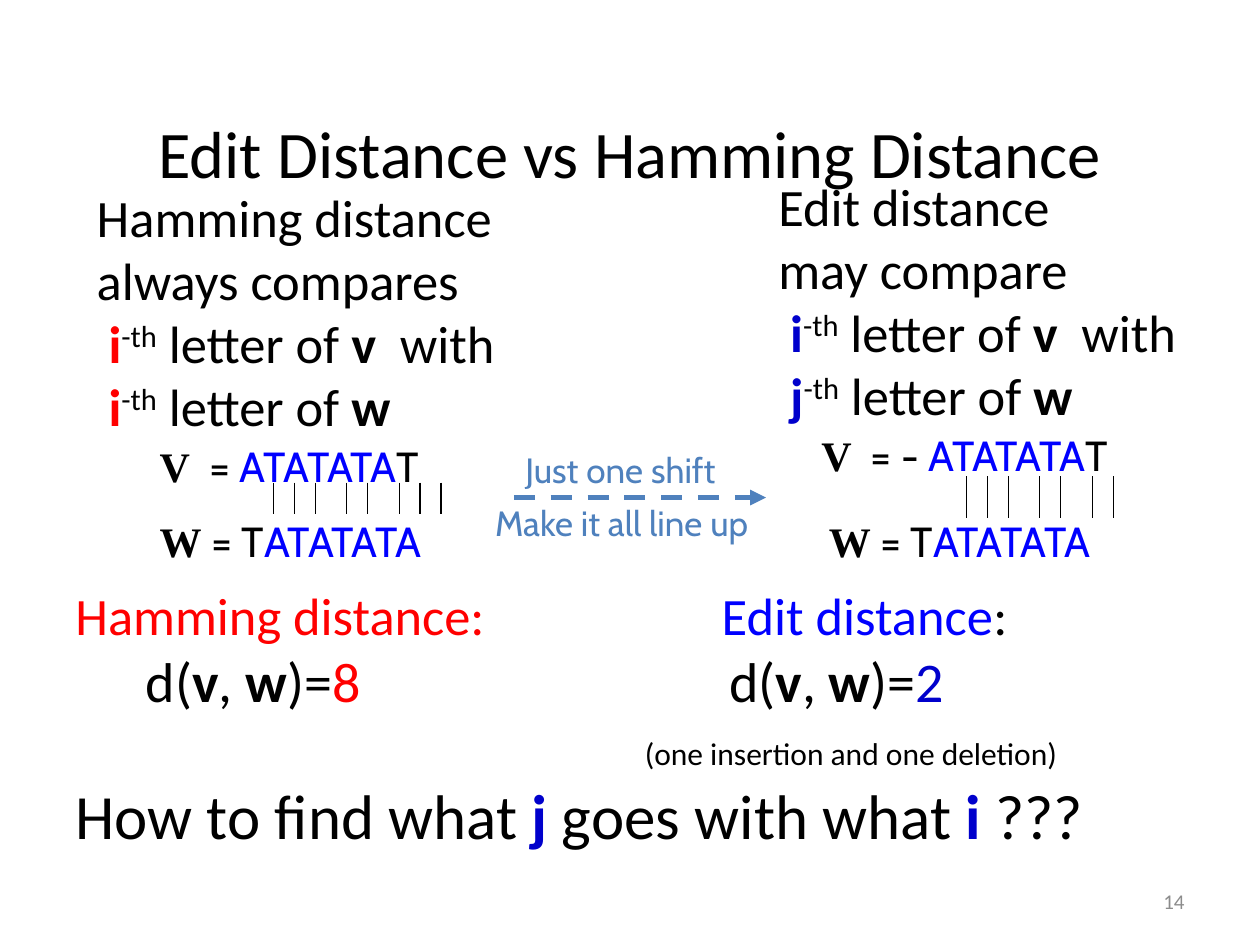
from dataclasses import dataclass
from lxml.etree import SubElement
from pptx import Presentation
from pptx.dml.color import RGBColor
from pptx.enum.dml import MSO_LINE_DASH_STYLE as Dash
from pptx.enum.shapes import MSO_CONNECTOR as Connector
from pptx.enum.text import MSO_ANCHOR as Anchor, MSO_AUTO_SIZE as AutoSize, PP_ALIGN as Align
from pptx.oxml.ns import qn
from pptx.util import Cm, Pt


@dataclass(frozen=True)
class Theme:
    """Colours, fonts and type sizes of the slide."""
    black: str = "000000"
    red: str = "FF0000"
    blue: str = "0000FF"
    navy: str = "0000CC"
    steel: str = "4F81BD"
    grey: str = "8C8C8C"
    body_font: str = "Calibri"
    sequence_font: str = "Cabin"
    symbol_font: str = "Times New Roman"
    title: int = 38
    question: int = 36
    formula: int = 32
    body: int = 30
    sequence: int = 24
    caption: int = 20
    remark: int = 18
    number: int = 12


THEME = Theme()
MATCH_OFFSETS = (0, 0.42, 0.85, 1.48, 1.9, 2.54, 2.96, 3.38)


def add_text(paragraph, text, size=THEME.body, color=THEME.black,
             font=THEME.body_font, bold=False, raised=False):
    """Append one formatted run to a paragraph."""
    run = paragraph.add_run()
    run.text = text
    run.font.size = Pt(size)
    run.font.name = font
    run.font.bold = bold
    run.font.color.rgb = RGBColor.from_string(color)
    if raised:
        run.font._element.set("baseline", "30000")


def add_box(slide, left, top, width, height, wrap=True):
    """Add a text box and return its text frame."""
    frame = slide.shapes.add_textbox(Cm(left), Cm(top), Cm(width), Cm(height)).text_frame
    frame.word_wrap = wrap
    return frame


def add_line(slide, start, end, color=THEME.black, width=0.75):
    """Draw a straight connector without a shadow."""
    line = slide.shapes.add_connector(Connector.STRAIGHT, *map(Cm, start + end))
    line.line.color.rgb = RGBColor.from_string(color)
    line.line.width = Pt(width)
    SubElement(line._element.spPr, qn("a:effectLst"))
    return line


def add_title(slide, text):
    """Place the title in its placeholder."""
    title = slide.shapes.title
    title.left, title.top, title.width, title.height = map(Cm, (1.27, 1.47, 22.86, 3.18))
    frame = title.text_frame
    frame.auto_size = AutoSize.NONE
    frame.vertical_anchor = Anchor.MIDDLE
    frame.paragraphs[0].alignment = Align.CENTER
    add_text(frame.paragraphs[0], text, size=THEME.title)


def add_comparison(slide, left, top, opening, indices, color):
    """Describe which letters a distance compares."""
    frame = add_box(slide, left, top, 9.96, 5.33)
    add_text(frame.paragraphs[0], opening[0])
    add_text(frame.add_paragraph(), opening[1])
    for index, word, ending in zip(indices, "vw", ("  with", "")):
        paragraph = frame.add_paragraph()
        add_text(paragraph, f" {index}", color=color, bold=True)
        add_text(paragraph, "-th", raised=True)
        add_text(paragraph, " letter of ")
        add_text(paragraph, word, bold=True)
        if ending:
            add_text(paragraph, ending)


def add_sequence(slide, left, top, symbol, before, after=""):
    """Write one sequence with its shared letters in blue."""
    paragraph = add_box(slide, left, top, 7.19, 1.27).paragraphs[0]
    add_text(paragraph, symbol, THEME.sequence, font=THEME.symbol_font, bold=True)
    parts = ((before, THEME.black), ("ATATATA", THEME.blue), (after, THEME.black))
    for text, color in parts:
        if text:
            add_text(paragraph, text, THEME.sequence, color, THEME.sequence_font)


def add_matches(slide, left, top, bottom, count):
    """Draw the upright strokes between paired letters."""
    for offset in MATCH_OFFSETS[:count]:
        add_line(slide, (left + offset, top), (left + offset, bottom))


def add_shift_arrow(slide):
    """Draw the dashed arrow and its two captions."""
    arrow = add_line(slide, (10.36, 10.03), (15.44, 10.03), THEME.steel, 3)
    arrow.line.dash_style = Dash.DASH
    SubElement(arrow.line._get_or_add_ln(), qn("a:tailEnd"), type="triangle")
    captions = (("Just one shift", 10.34, 8.92, 4.67), ("Make it all line up", 9.73, 9.98, 5.99))
    for text, left, top, width in captions:
        frame = add_box(slide, left, top, width, 1.09, wrap=False)
        add_text(frame.paragraphs[0], text, THEME.caption, THEME.steel, THEME.sequence_font)


def set_tabs(paragraph, *positions):
    """Give a paragraph left-aligned tab stops."""
    tabs = SubElement(paragraph._p.get_or_add_pPr(), qn("a:tabLst"))
    for position in positions:
        SubElement(tabs, qn("a:tab"), pos=str(Cm(position)), algn="l")


def add_formula(paragraph, value, color):
    """Write the distance of v and w after a tab."""
    for text, bold in (("\td(", False), ("v", True), (", ", False), ("w", True), (")=", False)):
        add_text(paragraph, text, THEME.formula, bold=bold)
    add_text(paragraph, value, THEME.formula, color)


def add_results(slide):
    """Write both distances and the closing question."""
    frame = add_box(slide, 1.27, 11.63, 24.13, 7.21)
    headings = frame.paragraphs[0]
    set_tabs(headings, 13.03)
    add_text(headings, "Hamming distance:", color=THEME.red)
    add_text(headings, "\tEdit distance", color=THEME.blue)
    add_text(headings, ":")

    formulas = frame.add_paragraph()
    set_tabs(formulas, 1.42, 13.18)
    add_formula(formulas, "8", THEME.red)
    add_formula(formulas, "2", THEME.navy)

    remark = frame.add_paragraph()
    set_tabs(remark, 11.48)
    add_text(remark, "\t")
    add_text(remark, "(one insertion and one deletion)", THEME.remark)

    question = frame.add_paragraph()
    for text, index in (("How to find what ", "j"), (" goes with what ", "i")):
        add_text(question, text, THEME.question)
        add_text(question, index, THEME.question, THEME.navy, bold=True)
    add_text(question, " ???", THEME.question)


def add_number(slide, number):
    """Write the slide number at the lower right."""
    frame = add_box(slide, 18.21, 17.65, 5.92, 1.02)
    frame.vertical_anchor = Anchor.MIDDLE
    frame.paragraphs[0].alignment = Align.RIGHT
    add_text(frame.paragraphs[0], number, THEME.number, THEME.grey)


def main():
    """Build and save the slide."""
    presentation = Presentation()
    presentation.slide_width, presentation.slide_height = Cm(25.4), Cm(19.05)
    slide = presentation.slides.add_slide(presentation.slide_layouts[5])
    add_title(slide, "Edit Distance vs Hamming Distance")
    add_sequence(slide, 2.97, 8.76, "V ", " = ", "T")
    add_sequence(slide, 2.97, 10.26, "W ", "= T")
    add_results(slide)
    add_matches(slide, 5.51, 9.73, 10.36, 8)
    add_sequence(slide, 16.46, 10.26, "W", " = T")
    add_matches(slide, 19.48, 9.6, 10.44, 7)
    add_sequence(slide, 16.31, 8.53, "V", "  = - ", "T")
    add_comparison(slide, 1.7, 3.61, ("Hamming distance", "always compares"), "ii", THEME.red)
    add_comparison(slide, 15.44, 3.38, ("Edit distance", "may compare"), "ij", THEME.navy)
    add_number(slide, "14")
    add_shift_arrow(slide)
    presentation.save("out.pptx")


if __name__ == "__main__":
    main()
